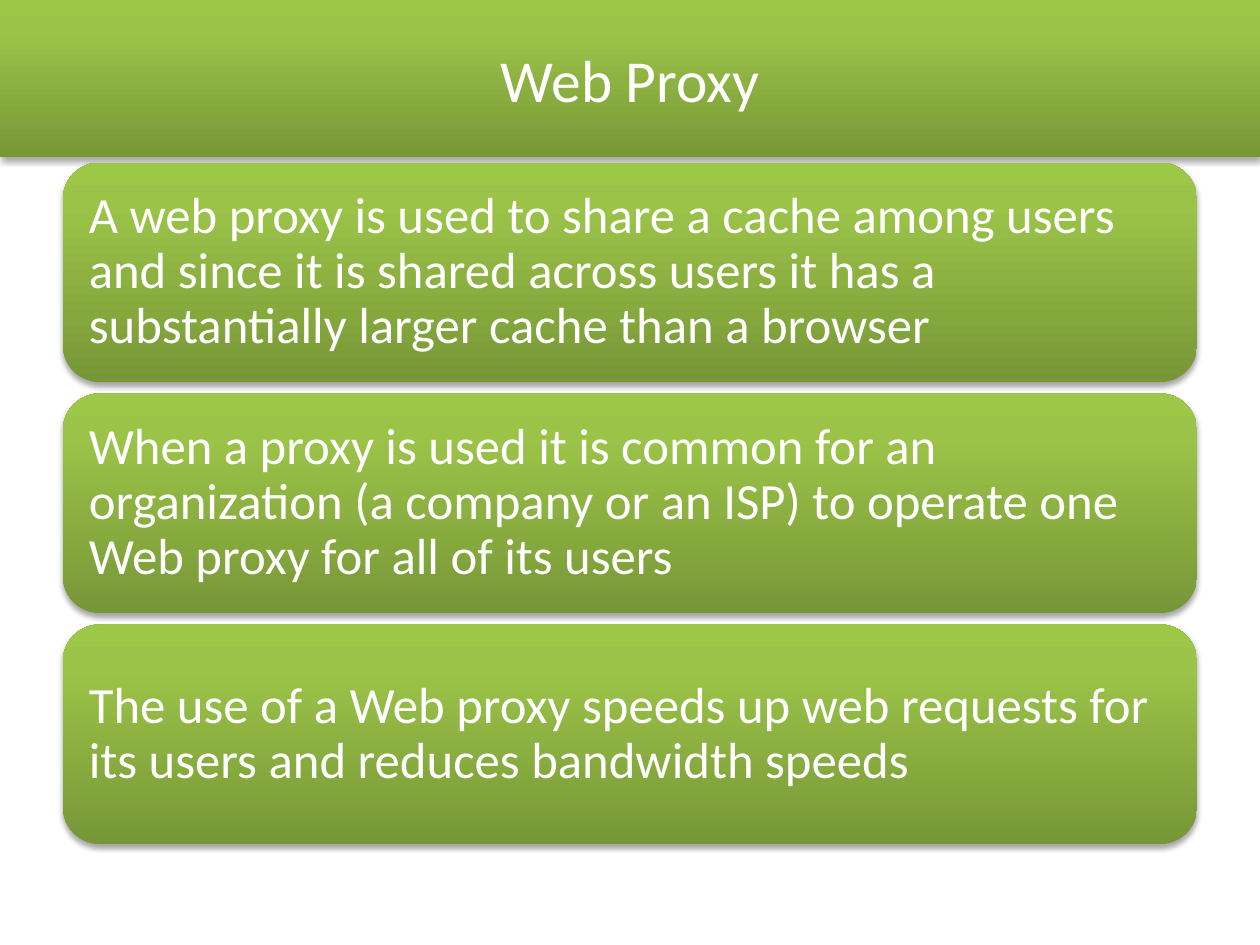
import pptx
import pptx.dml.color
import pptx.enum.shapes
import pptx.enum.text
import pptx.oxml
import pptx.oxml.ns
import pptx.util
from pptx.util import Inches

FONT = "Calibri"
WHITE = "FFFFFF"
GRADIENT = [(0, "779737"), (80, "9BC348"), (100, "9DC746")]
POINTS = [
    "A web proxy is used to share a cache among users and since it is shared "
    "across users it has a substantially larger cache than a browser",
    "When a proxy is used it is common for an organization (a company or an ISP) "
    "to operate one Web proxy for all of its users",
    "The use of a Web proxy speeds up web requests for its users and reduces "
    "bandwidth speeds",
]


def rgb(value):
    return pptx.dml.color.RGBColor.from_string(value)


def style_panel(sp):
    """Give a shape the green gradient, no outline and a soft shadow below."""
    ns = pptx.oxml.ns.nsdecls("a")
    stops = "".join(
        f'<a:gs pos="{pos * 1000}"><a:srgbClr val="{color}"/></a:gs>'
        for pos, color in GRADIENT
    )
    sp.line.fill.background()
    sp.line._get_or_add_ln().addprevious(pptx.oxml.parse_xml(
        f'<a:gradFill {ns} rotWithShape="1"><a:gsLst>{stops}</a:gsLst>'
        '<a:lin ang="16200000" scaled="0"/></a:gradFill>'
    ))
    sp._element.spPr.append(pptx.oxml.parse_xml(
        f'<a:effectLst {ns}><a:outerShdw blurRad="40000" dist="23000" '
        'dir="5400000" rotWithShape="0"><a:srgbClr val="000000">'
        '<a:alpha val="35000"/></a:srgbClr></a:outerShdw></a:effectLst>'
    ))


def write_text(sp, text, size, align):
    tf = sp.text_frame
    tf.word_wrap = True
    tf.auto_size = pptx.enum.text.MSO_AUTO_SIZE.NONE
    tf.vertical_anchor = pptx.enum.text.MSO_ANCHOR.MIDDLE
    p = tf.paragraphs[0]
    p.alignment = align
    r = p.add_run()
    r.text = text
    r.font.name = FONT
    r.font.size = pptx.util.Pt(size)
    r.font.color.rgb = rgb(WHITE)
    return tf


def add_title(s, text, left, top, width, height):
    sp = s.shapes.title
    sp.left, sp.top, sp.width, sp.height = map(Inches, (left, top, width, height))
    style_panel(sp)
    write_text(sp, text, 34, pptx.enum.text.PP_ALIGN.CENTER)


def add_panels(s, texts, left, top, width, height, gap):
    """Stack one rounded panel per text, equally high, within the given box."""
    panel_height = (height - gap * (len(texts) - 1)) / len(texts)
    for i, text in enumerate(texts):
        sp = s.shapes.add_shape(
            pptx.enum.shapes.MSO_SHAPE.ROUNDED_RECTANGLE,
            Inches(left), Inches(top + i * (panel_height + gap)),
            Inches(width), Inches(panel_height),
        )
        style_panel(sp)
        tf = write_text(sp, text, 29, pptx.enum.text.PP_ALIGN.LEFT)
        tf.margin_left = tf.margin_right = Inches(0.12)
        tf.margin_top = tf.margin_bottom = Inches(0.12)
        tf.paragraphs[0].line_spacing = 0.9


def main():
    prs = pptx.Presentation()
    prs.slide_width, prs.slide_height = Inches(10), Inches(7.5)
    s = prs.slides.add_slide(prs.slide_layouts.get_by_name("Title Only"))
    add_title(s, "Web Proxy", 0, 0, 10, 1.25)
    add_panels(s, POINTS, 0.5, 1.29, 9, 5.41, 0.09)
    prs.save("out.pptx")


if __name__ == "__main__":
    main()
